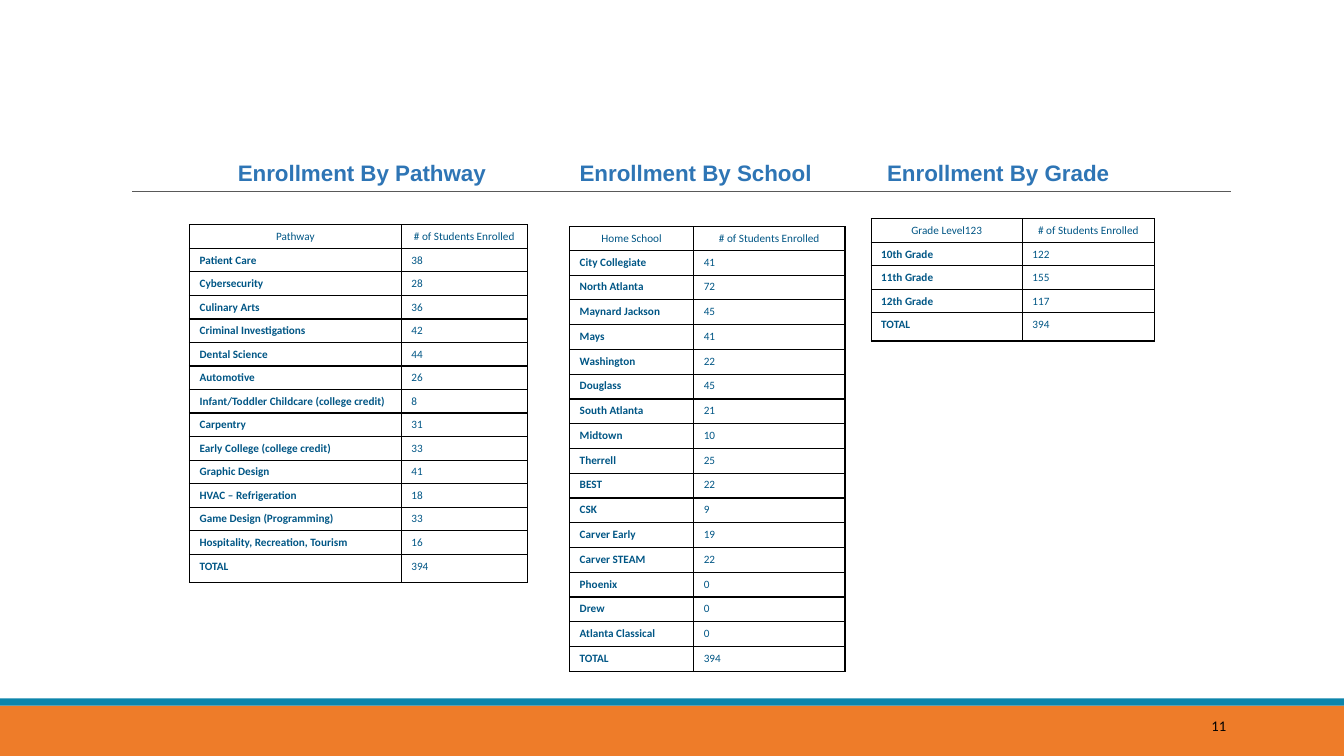
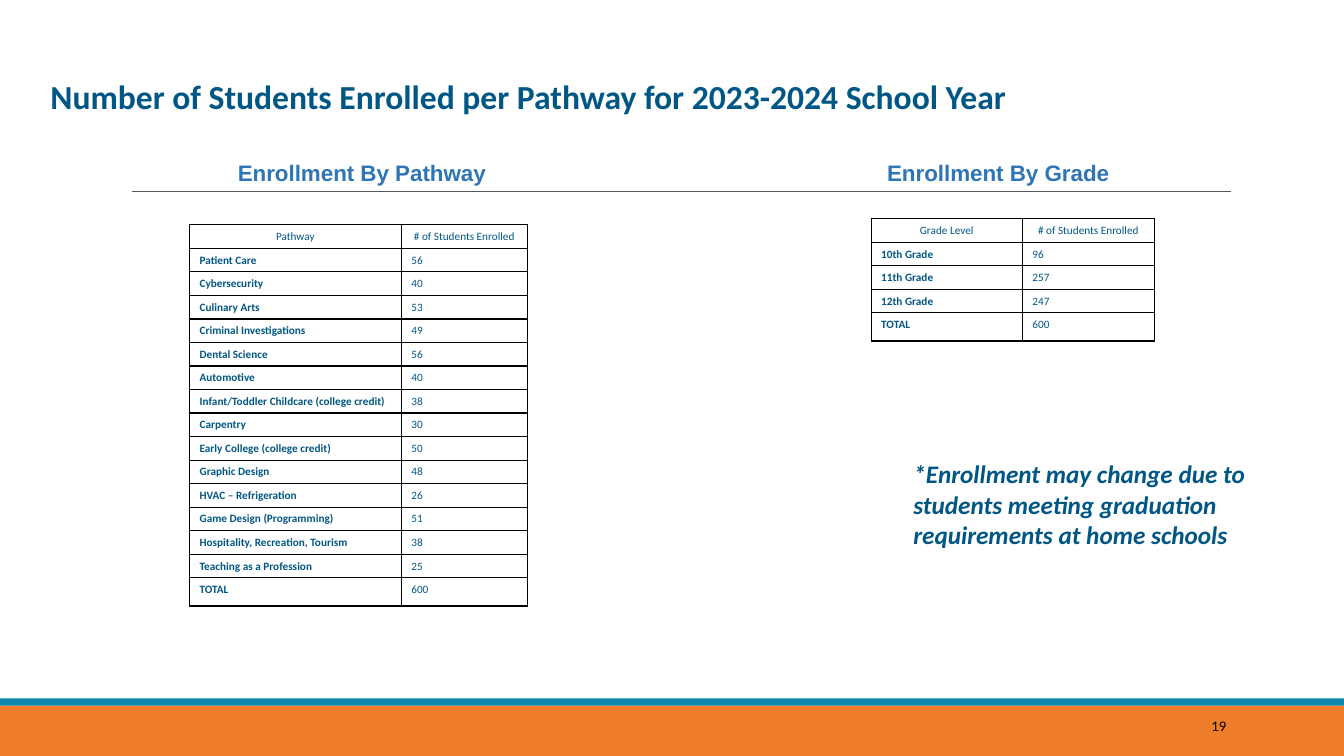
from dataclasses import dataclass

from pptx import Presentation
from pptx.dml.color import RGBColor as RGB
from pptx.enum.shapes import MSO_CONNECTOR as CONNECTOR, MSO_SHAPE as SHAPE
from pptx.enum.text import MSO_ANCHOR as ANCHOR, MSO_AUTO_SIZE as AUTO, PP_ALIGN as ALIGN
from pptx.oxml.ns import qn
from pptx.util import Inches, Pt
from lxml import etree


@dataclass(frozen=True)
class Theme:
    width: float = 13.33
    height: float = 7.5
    orange: str = "EE7C29"
    teal: str = "0D85AB"
    navy: str = "005685"
    blue: str = "2E75B5"
    rule: str = "595959"
    black: str = "000000"
    body_font: str = "Calibri"
    heading_font: str = "Arial"
    title_size: float = 24
    note_size: float = 18
    heading_size: float = 16
    number_size: float = 10.5
    cell_size: float = 8
    border: float = 1
    row: float = 0.23
    total_row: float = 0.28


@dataclass(frozen=True)
class Column:
    heading: str
    label: str
    heading_left: float
    left: float
    top: float
    widths: tuple


T = Theme()
BLANK, TITLE_ONLY = 6, 5
PATHWAY = Column("Enrollment By Pathway", "Pathway", 2.26, 1.88, 2.23, (2.1, 1.25))
SCHOOL = Column("Enrollment By School", "Home School", 5.65, 5.65, 2.25, (1.23, 1.5))
GRADE = Column("Enrollment By Grade", "Grade Level", 8.7, 8.64, 2.17, (1.5, 1.31))

PATHWAYS = (
    ("Patient Care", 38, 56),
    ("Cybersecurity", 28, 40),
    ("Culinary Arts", 36, 53),
    ("Criminal Investigations", 42, 49),
    ("Dental Science", 44, 56),
    ("Automotive", 26, 40),
    ("Infant/Toddler Childcare (college credit)", 8, 38),
    ("Carpentry", 31, 30),
    ("Early College (college credit)", 33, 50),
    ("Graphic Design", 41, 48),
    ("HVAC – Refrigeration", 18, 26),
    ("Game Design (Programming)", 33, 51),
    ("Hospitality, Recreation, Tourism", 16, 38),
    ("Teaching as a Profession", None, 25),
    ("TOTAL", 394, 600),
)
SCHOOLS = (
    ("City Collegiate", 41),
    ("North Atlanta", 72),
    ("Maynard Jackson", 45),
    ("Mays", 41),
    ("Washington", 22),
    ("Douglass", 45),
    ("South Atlanta", 21),
    ("Midtown", 10),
    ("Therrell", 25),
    ("BEST", 22),
    ("CSK", 9),
    ("Carver Early", 19),
    ("Carver STEAM", 22),
    ("Phoenix", 0),
    ("Drew", 0),
    ("Atlanta Classical", 0),
    ("TOTAL", 394),
)
GRADES = (
    ("10th Grade", 122, 96),
    ("11th Grade", 155, 257),
    ("12th Grade", 117, 247),
    ("TOTAL", 394, 600),
)


def for_year(rows, year):
    return [(row[0], row[year]) for row in rows if row[year] is not None]


def write(tf, text, size, color, font=T.body_font, bold=False, italic=False, align=ALIGN.LEFT):
    p = tf.paragraphs[0]
    p.alignment = align
    r = p.add_run()
    r.text = text
    r.font.name, r.font.size = font, Pt(size)
    r.font.bold, r.font.italic = bold, italic
    r.font.color.rgb = RGB.from_string(color)


def add_text(slide, box, text, size, color, **style):
    tf = slide.shapes.add_textbox(*map(Inches, box)).text_frame
    tf.word_wrap = True
    write(tf, text, size, color, **style)


def add_band(slide, top, height, color):
    sp = slide.shapes.add_shape(SHAPE.RECTANGLE, 0, Inches(top), Inches(T.width), Inches(height))
    sp.shadow.inherit = False
    sp.fill.solid()
    sp.fill.fore_color.rgb = RGB.from_string(color)
    sp.line.fill.background()
    return sp


def add_rule(slide, left, right, y):
    line = slide.shapes.add_connector(CONNECTOR.STRAIGHT, *map(Inches, (left, y, right, y)))
    line.line.color.rgb = RGB.from_string(T.rule)
    line.line.width = Pt(0.5)
    etree.SubElement(line.element.spPr, qn("a:effectLst"))
    return line


def decorate_master(prs, slide):
    parts = (add_band(slide, 7, 0.5, T.orange),
             add_band(slide, 6.93, 0.07, T.teal),
             add_rule(slide, 1.31, 12.21, 1.9))
    tree = prs.slide_master.element.cSld.spTree
    for i, part in enumerate(parts):
        part.element.xpath(".//p:cNvPr")[0].set("id", str(100 + i))
        tree.insert(2 + i, part.element)


def add_borders(cell):
    tcPr = cell._tc.get_or_add_tcPr()
    for side in ("lnL", "lnR", "lnT", "lnB"):
        ln = etree.SubElement(tcPr, qn(f"a:{side}"), w=str(Pt(T.border)))
        fill = etree.SubElement(ln, qn("a:solidFill"))
        etree.SubElement(fill, qn("a:srgbClr"), val=T.black)


def add_table(slide, column, rows, label, body_row, total_row):
    heights = [T.row] + [body_row] * (len(rows) - 1) + [total_row]
    box = (column.left, column.top, sum(column.widths), sum(heights))
    table = slide.shapes.add_table(len(heights), len(column.widths), *map(Inches, box)).table
    table.first_row = table.horz_banding = False
    for col, width in zip(table.columns, column.widths):
        col.width = Inches(width)
    for row, height in zip(table.rows, heights):
        row.height = Inches(height)
    for i, values in enumerate([(label, "# of Students Enrolled"), *rows]):
        header = i == 0
        for j, value in enumerate(values):
            cell = table.cell(i, j)
            add_borders(cell)
            cell.fill.background()
            cell.vertical_anchor = ANCHOR.BOTTOM if header else ANCHOR.TOP
            write(cell.text_frame, str(value), T.cell_size, T.navy,
                  bold=not header and j == 0,
                  align=ALIGN.CENTER if header else ALIGN.LEFT)


def add_column(slide, column, rows, label=None, body_row=T.row, total_row=T.total_row):
    add_text(slide, (column.heading_left, 1.53, 3.28, 0.37), column.heading,
             T.heading_size, T.blue, font=T.heading_font, bold=True)
    add_table(slide, column, rows, label or column.label, body_row, total_row)


def add_title(slide, text):
    title = slide.shapes.title
    title.left, title.top, title.width, title.height = map(Inches, (0.4, 0.7, 9.76, 0.5))
    tf = title.text_frame
    tf.auto_size, tf.word_wrap = AUTO.NONE, True
    tf.vertical_anchor = ANCHOR.TOP
    write(tf, text, T.title_size, T.navy, bold=True)


def add_slide(prs, layout, number):
    slide = prs.slides.add_slide(prs.slide_layouts[layout])
    add_text(slide, (10.83, 7.06, 1.43, 0.4), str(number), T.number_size, T.black,
             align=ALIGN.RIGHT)
    return slide


def main():
    prs = Presentation()
    prs.slide_width, prs.slide_height = Inches(T.width), Inches(T.height)

    slide = add_slide(prs, BLANK, 11)
    decorate_master(prs, slide)
    add_column(slide, PATHWAY, for_year(PATHWAYS, 1))
    school_row = (4.41 - T.row) / len(SCHOOLS)
    add_column(slide, SCHOOL, SCHOOLS, body_row=school_row, total_row=school_row)
    add_column(slide, GRADE, for_year(GRADES, 1), label="Grade Level123")

    slide = add_slide(prs, TITLE_ONLY, 19)
    add_title(slide, "Number of Students Enrolled per Pathway for 2023-2024 School Year")
    add_column(slide, PATHWAY, for_year(PATHWAYS, 2))
    add_column(slide, GRADE, for_year(GRADES, 2))
    add_text(slide, (8.96, 4.5, 3.82, 1.01),
             "*Enrollment may change due to students meeting graduation "
             "requirements at home schools",
             T.note_size, T.navy, bold=True, italic=True)

    prs.save("out.pptx")


if __name__ == "__main__":
    main()
